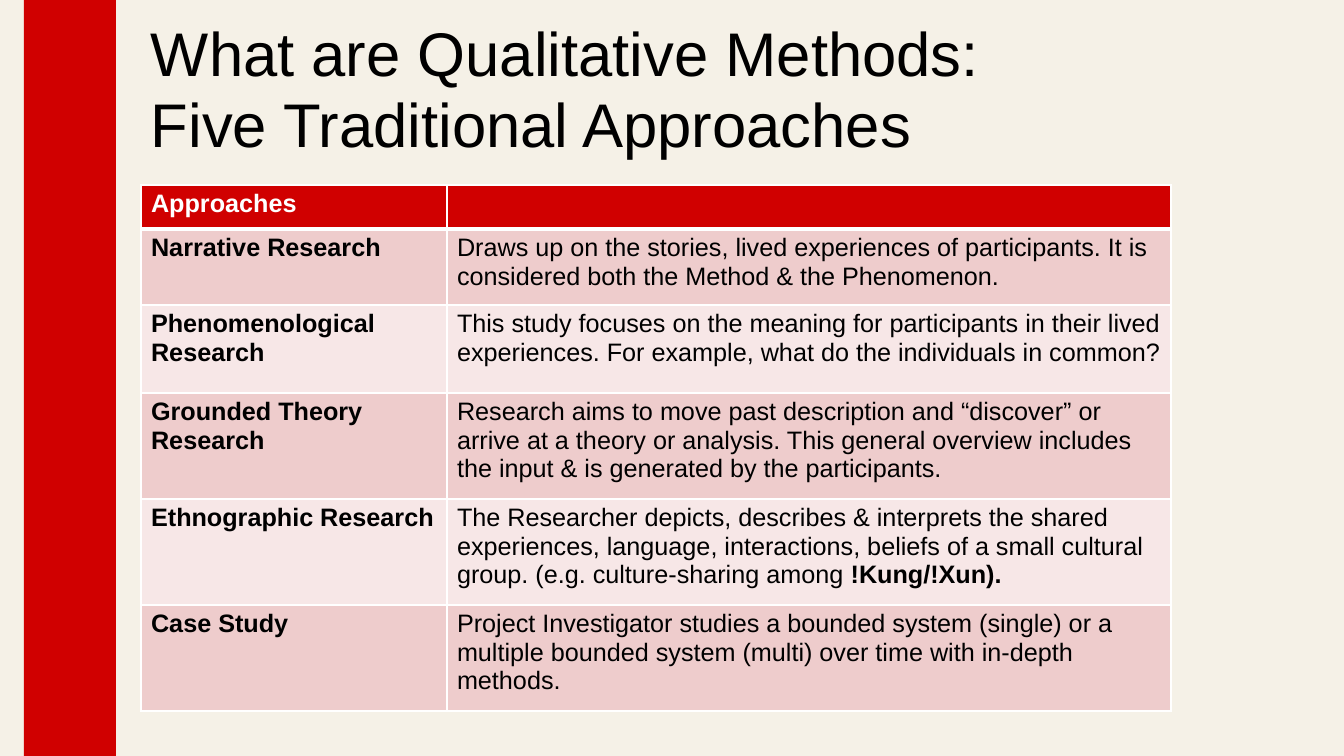
from lxml import etree
from pptx import Presentation
from pptx.dml.color import RGBColor
from pptx.enum.shapes import MSO_SHAPE
from pptx.enum.text import MSO_ANCHOR
from pptx.oxml.ns import qn
from pptx.util import Pt

RECT = MSO_SHAPE.RECTANGLE
MIDDLE = MSO_ANCHOR.MIDDLE
RED = RGBColor(0xD0, 0x00, 0x00)
CREAM = RGBColor(0xF5, 0xF1, 0xE7)
ROSE = RGBColor(0xEE, 0xCC, 0xCC)
BLUSH = RGBColor(0xF7, 0xE7, 0xE7)
WHITE = RGBColor(0xFF, 0xFF, 0xFF)
BLACK = RGBColor(0x00, 0x00, 0x00)
WIDE, HIGH = 1344, 756
SCALE = 12192000 / WIDE

TITLE = "What are Qualitative Methods:\vFive Traditional Approaches"
COLS = [306, 724]
ROWS = [
    (44, "Approaches", []),
    (76, "Narrative Research", [
        "Draws up on the stories, lived experiences of participants. "
        "It is considered both the Method & the Phenomenon."]),
    (88, "Phenomenological Research", [
        "This study focuses on the meaning for participants in their lived "
        "experiences. For example, what do the individuals in common?"]),
    (106, "Grounded Theory Research", [
        "Research aims to move past description and “discover” or arrive at "
        "a theory or analysis. This general overview includes the input & "
        "is generated by the participants."]),
    (106, "Ethnographic Research", [
        "The Researcher depicts, describes & interprets the shared "
        "experiences, language, interactions, beliefs of a small cultural "
        "group. (e.g. culture-sharing among ", "ǃKung/!Xun)."]),
    (106, "Case Study", [
        "Project Investigator studies a bounded system (single) or a "
        "multiple bounded system (multi) over time with in-depth methods."]),
]


def px(*sizes):
    return [round(size * SCALE) for size in sizes]


def style(font, size, color, bold=False):
    for name, value in {"name": "Arial", "size": Pt(size), "bold": bold}.items():
        setattr(font, name, value)
    font.color.rgb = color


def band(slide, box, color):
    shape = slide.shapes.add_shape(RECT, *px(*box))
    shape.shadow.inherit = False
    shape.fill.solid()
    shape.fill.fore_color.rgb = color
    shape.line.fill.background()


def title(slide, box):
    frame = slide.shapes.add_textbox(*px(*box)).text_frame
    looks = {"word_wrap": True, "vertical_anchor": MIDDLE,
             "margin_top": 0, "margin_bottom": px(67)[0]}
    for name, value in looks.items():
        setattr(frame, name, value)
    para = frame.paragraphs[0]
    para.text = TITLE
    para.line_spacing = 0.95
    for run in para.runs:
        style(run.font, 44, BLACK)


def edge(cell, widths):
    props = cell._tc.get_or_add_tcPr()
    for spot, (side, width) in enumerate(widths.items()):
        line = etree.Element(qn(f"a:ln{side}"), w=str(Pt(width)))
        fill = etree.SubElement(line, qn("a:solidFill"))
        etree.SubElement(fill, qn("a:srgbClr"), val=str(WHITE))
        props.insert(spot, line)


def write(cell, parts, color, bold):
    para = cell.text_frame.paragraphs[0]
    style(para.font, 18, color, bold)
    for spot, part in enumerate(parts):
        run = para.add_run()
        run.text = part
        style(run.font, 18, color, bold or spot > 0)


def grid(slide, box):
    table = slide.shapes.add_table(len(ROWS), len(COLS), *px(*box)).table
    for col, width in zip(table.columns, px(*COLS)):
        col.width = width
    for r, (height, name, parts) in enumerate(ROWS):
        table.rows[r].height = px(height)[0]
        back = RED if r == 0 else ROSE if r % 2 else BLUSH
        ink = WHITE if r == 0 else BLACK
        for c, words in enumerate([[name], parts]):
            cell = table.cell(r, c)
            cell.fill.solid()
            cell.fill.fore_color.rgb = back
            edge(cell, {"L": 1, "R": 1, "T": 3 if r == 1 else 1,
                        "B": 3 if r == 0 else 1})
            write(cell, words, ink, c == 0)


def main():
    deck = Presentation()
    deck.slide_width, deck.slide_height = px(WIDE, HIGH)
    slide = deck.slides.add_slide(deck.slide_layouts[6])
    band(slide, (0, 0, WIDE, HIGH), CREAM)
    band(slide, (24, 0, 92, HIGH), RED)
    title(slide, (141, 40, 1111, 169))
    grid(slide, (141, 185, sum(COLS), sum(row[0] for row in ROWS)))
    deck.save("out.pptx")


if __name__ == "__main__":
    main()
